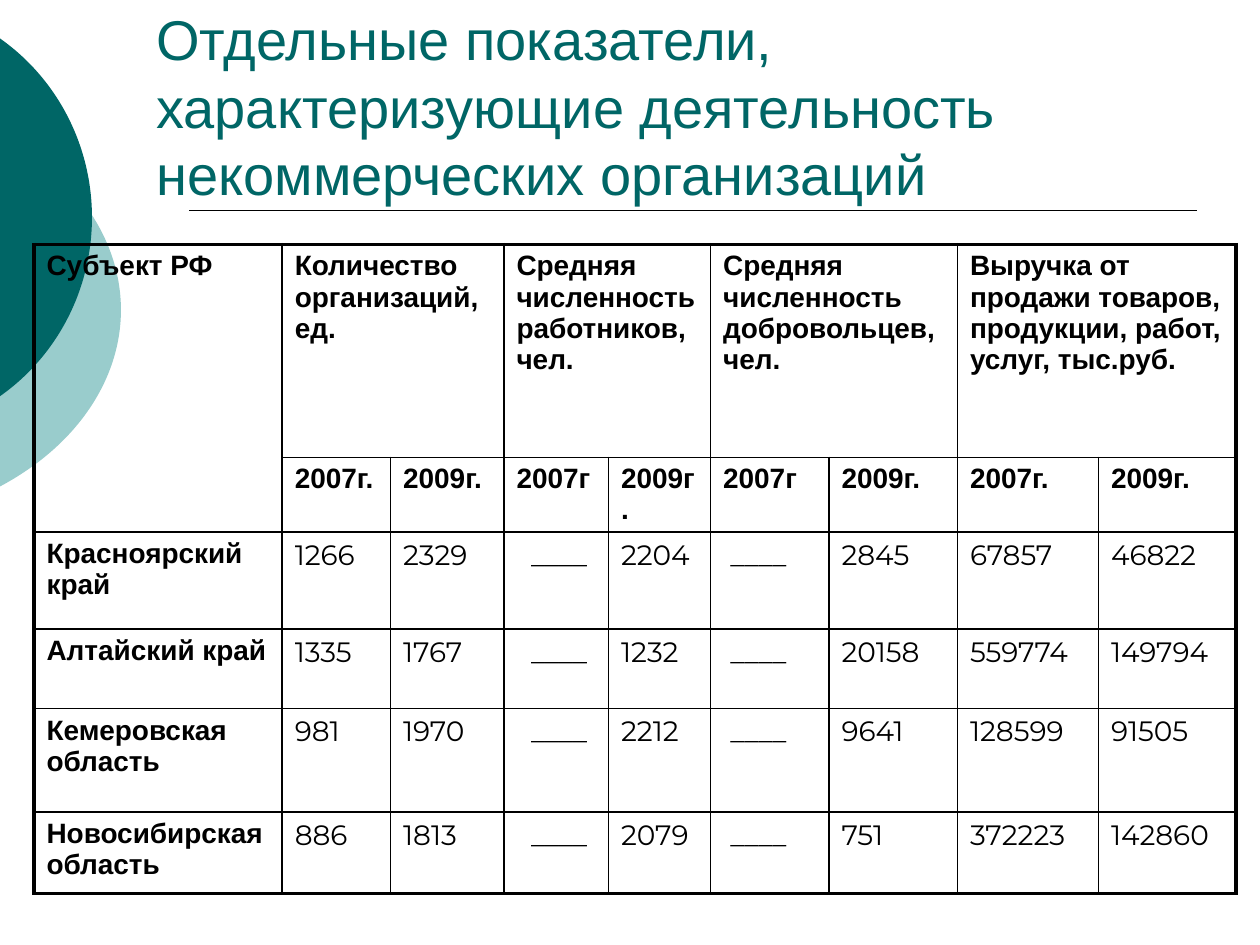
import pptx
import pptx.dml.color
import pptx.enum.shapes
import pptx.enum.text
import pptx.oxml
import pptx.oxml.ns
import pptx.util
from pptx.util import Inches

TITLE = "Отдельные показатели, характеризующие деятельность некоммерческих организаций"
GROUPS = [
    "Количество организаций, ед.",
    "Средняя численность работников, чел.",
    "Средняя численность добровольцев, чел.",
    "Выручка от продажи товаров, продукции, работ, услуг, тыс.руб.",
]
YEARS = ["2007г.", "2009г.", "2007г", "2009г.", "2007г", "2009г.", "2007г.", "2009г."]
REGIONS = [
    ["Красноярский край", "1266", "2329", "  ____", "2204", " ____", "2845", "67857", "46822"],
    ["Алтайский край", "1335", "1767", "  ____", "1232", " ____", "20158", "559774", "149794"],
    ["Кемеровская область", "981", "1970", "  ____", "2212", " ____", "9641", "128599", "91505"],
    ["Новосибирская область", "886", "1813", "  ____", "2079", " ____", "751", "372223", "142860"],
]
COL_WIDTHS = [1.97, 0.86, 0.9, 0.83, 0.81, 0.94, 1.02, 1.12, 1.09]
ROW_HEIGHTS = [1.69, 0.58, 0.77, 0.63, 0.82, 0.65]


def rgb(color):
    return pptx.dml.color.RGBColor.from_string(color)


def write(tf, text, size=16, font="Arial", color="000000", bold=False):
    tf.word_wrap = True
    p = tf.paragraphs[0]
    p.alignment = pptx.enum.text.PP_ALIGN.LEFT
    r = p.add_run()
    r.text = text
    r.font.size = pptx.util.Pt(size)
    r.font.name = font
    r.font.bold = bold
    r.font.color.rgb = rgb(color)


def add_disc(slide, left, top, width, height, color):
    """Oval that bleeds over the left edge of the slide."""
    s = slide.shapes.add_shape(
        pptx.enum.shapes.MSO_SHAPE.OVAL,
        Inches(left), Inches(top), Inches(width), Inches(height))
    s.shadow.inherit = False
    s.fill.solid()
    s.fill.fore_color.rgb = rgb(color)
    s.line.fill.background()


def add_rule(slide, left, top, width):
    s = slide.shapes.add_connector(
        pptx.enum.shapes.MSO_CONNECTOR.STRAIGHT,
        Inches(left), Inches(top), Inches(left + width), Inches(top))
    s.line.color.rgb = rgb("000000")
    s.line.width = pptx.util.Pt(1)
    sp_pr = s._element.spPr
    sp_pr.append(sp_pr.makeelement(pptx.oxml.ns.qn("a:effectLst"), {}))


def set_title(slide, left, top, width, height):
    sp = slide.shapes.title
    sp.left, sp.top, sp.width, sp.height = map(Inches, (left, top, width, height))
    tf = sp.text_frame
    tf.auto_size = pptx.enum.text.MSO_AUTO_SIZE.NONE
    tf.vertical_anchor = pptx.enum.text.MSO_ANCHOR.BOTTOM
    write(tf, TITLE, size=32, color="006666")


def set_borders(cell, widths):
    tc_pr = cell._tc.get_or_add_tcPr()
    for side, width in zip("LRTB", widths):
        tc_pr.append(pptx.oxml.parse_xml(
            f'<a:ln{side} {pptx.oxml.ns.nsdecls("a")} w="{pptx.util.Pt(width)}">'
            '<a:solidFill><a:srgbClr val="000000"/></a:solidFill>'
            f'</a:ln{side}>'))


def add_indicators(slide, left, top, width, height):
    rows, cols = len(ROW_HEIGHTS), len(COL_WIDTHS)
    table = slide.shapes.add_table(
        rows, cols, Inches(left), Inches(top), Inches(width), Inches(height)).table
    table.first_row = table.horz_banding = False
    for col, w in zip(table.columns, COL_WIDTHS):
        col.width = Inches(w)
    for row, h in zip(table.rows, ROW_HEIGHTS):
        row.height = Inches(h)

    table.cell(0, 0).merge(table.cell(1, 0))
    write(table.cell(0, 0).text_frame, "Субъект РФ", bold=True)
    for n, group in enumerate(GROUPS):
        first = 1 + 2 * n
        table.cell(0, first).merge(table.cell(0, first + 1))
        write(table.cell(0, first).text_frame, group, bold=True)
    for j, year in enumerate(YEARS, start=1):
        write(table.cell(1, j).text_frame, year, bold=True)
    for i, (region, *values) in enumerate(REGIONS, start=2):
        write(table.cell(i, 0).text_frame, region, bold=True)
        for j, value in enumerate(values, start=1):
            write(table.cell(i, j).text_frame, value, font="Montserrat")

    for i in range(rows):
        for j in range(cols):
            cell = table.cell(i, j)
            last_col = j + (cell.span_width if cell.is_merge_origin else 1) == cols
            outer = (j == 0, last_col, i == 0, i == rows - 1)
            set_borders(cell, [2.25 if edge else 1 for edge in outer])
            cell.fill.background()


def main():
    prs = pptx.Presentation()
    prs.slide_width, prs.slide_height = Inches(10), Inches(7.5)
    slide = prs.slides.add_slide(prs.slide_layouts[5])
    add_disc(slide, -3.54, 0.75, 4.5, 3.42, "99CCCC")
    add_disc(slide, -2.65, 0, 3.38, 3.45, "006666")
    add_rule(slide, 1.5, 1.67, 8)
    set_title(slide, 1.14, 0.44, 8.39, 1.25)
    add_indicators(slide, 0.27, 1.94, 9.53, 5.19)
    prs.save("out.pptx")


if __name__ == "__main__":
    main()
